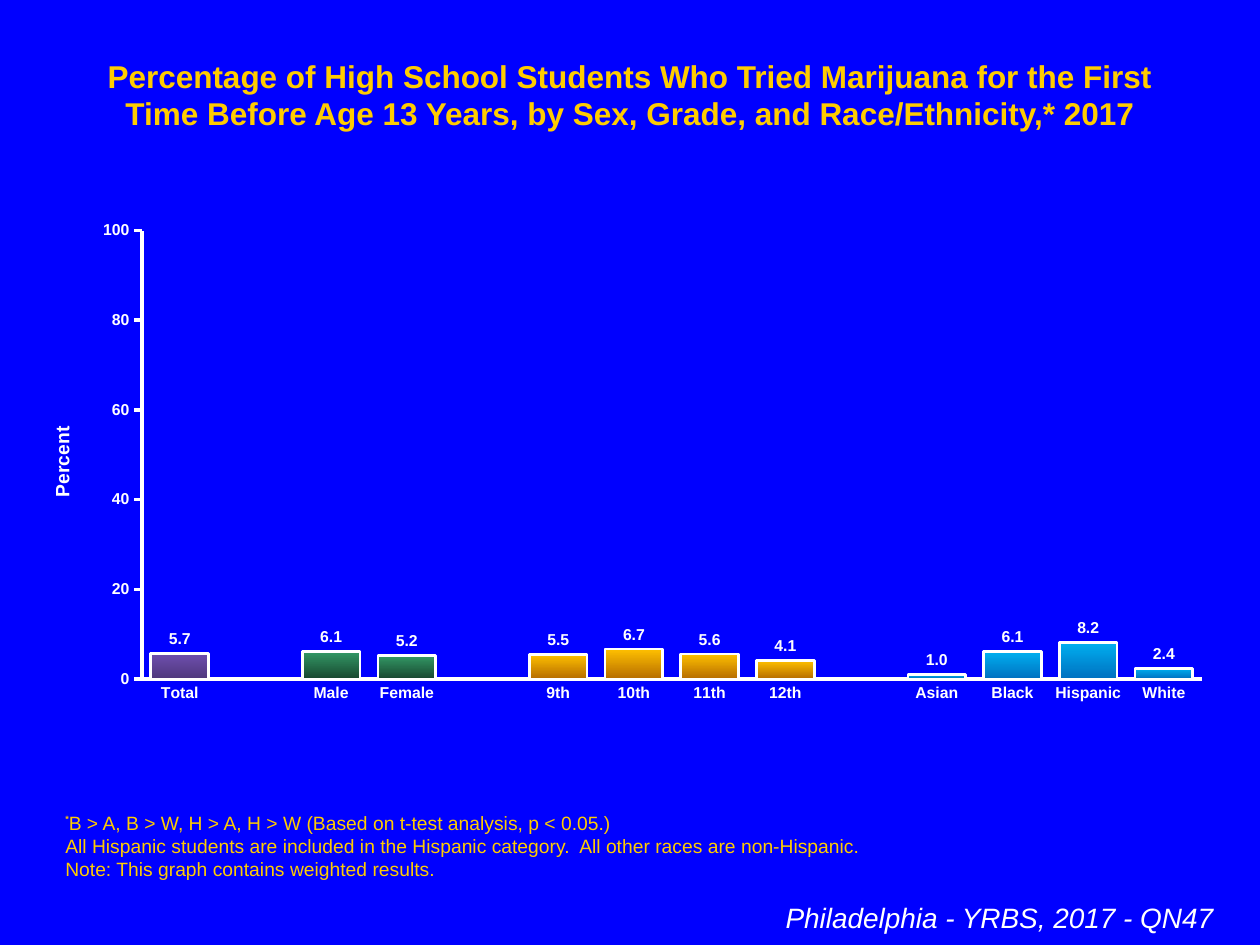
from lxml import etree
from pptx import Presentation
from pptx.chart.data import CategoryChartData
from pptx.dml.color import RGBColor
from pptx.enum.chart import XL_CHART_TYPE as ChartType
from pptx.enum.chart import XL_LABEL_POSITION as LabelPosition
from pptx.enum.chart import XL_TICK_MARK as TickMark
from pptx.enum.text import MSO_ANCHOR as Anchor
from pptx.enum.text import PP_ALIGN as Align
from pptx.oxml import parse_xml
from pptx.oxml.ns import nsdecls
from pptx.util import Inches, Pt

FONT = "Arial"
BLUE, GOLD, WHITE = "0000FF", "FFCC00", "FFFFFF"

TITLE = ("Percentage of High School Students Who Tried Marijuana for the First "
         "Time Before Age 13 Years, by Sex, Grade, and Race/Ethnicity,* 2017")
NOTES = [
    "B > A, B > W, H > A, H > W (Based on t-test analysis, p < 0.05.)",
    "All Hispanic students are included in the Hispanic category.  "
    "All other races are non-Hispanic.",
    "Note: This graph contains weighted results.",
]
SOURCE = "Philadelphia - YRBS, 2017 - QN47"

# Each group: top colour, bottom colour, bars
GROUPS = [
    ("6E4EAE", "4F387C", [("Total", 5.7)]),
    ("339966", "18472F", [("Male", 6.1), ("Female", 5.2)]),
    ("FFC000", "B66D00", [("9th", 5.5), ("10th", 6.7), ("11th", 5.6), ("12th", 4.1)]),
    ("00B0F0", "0070C0", [("Asian", 1.0), ("Black", 6.1), ("Hispanic", 8.2), ("White", 2.4)]),
]


def color(hex_code):
    return RGBColor.from_string(hex_code)


def style_font(font, size, hex_code=WHITE, bold=False, italic=False):
    font.name, font.size, font.bold, font.italic = FONT, Pt(size), bold, italic
    font.color.rgb = color(hex_code)


def style_line(line, width):
    line.color.rgb = color(WHITE)
    line.width = Pt(width)


def add_text(page, box, lines, size, hex_code, align=Align.LEFT, anchor=Anchor.TOP, **style):
    frame = page.shapes.add_textbox(*map(Inches, box)).text_frame
    frame.word_wrap = True
    frame.vertical_anchor = anchor
    frame.text = "\n".join(lines)
    for para in frame.paragraphs:
        para.alignment = align
        style_font(para.font, size, hex_code, **style)
    return frame


def add_notes(page, box):
    frame = add_text(page, box, ["*"] + NOTES[1:], 11, GOLD, anchor=Anchor.BOTTOM)
    first = frame.paragraphs[0]
    star = first.runs[0]
    star.font.size, star.font.bold = Pt(9), True
    star.font._element.set("baseline", "50000")
    first.add_run().text = NOTES[0]


def set_plot_layout(chart, x, y, width, height):
    plot_area = chart._chartSpace.chart.plotArea
    for old in plot_area.findall("c:layout", plot_area.nsmap):
        plot_area.remove(old)
    layout = parse_xml(f"<c:layout {nsdecls('c')}><c:manualLayout/></c:layout>")
    settings = {"layoutTarget": "inner", "xMode": "edge", "yMode": "edge",
                "x": x, "y": y, "w": width, "h": height}
    for name, value in settings.items():
        tag = "{%s}%s" % (layout.nsmap["c"], name)
        etree.SubElement(layout[0], tag).set("val", str(value))
    plot_area.insert(0, layout)


def style_axes(chart):
    for axis in (chart.category_axis, chart.value_axis):
        axis.has_major_gridlines = False
        axis.minor_tick_mark = TickMark.NONE
        style_font(axis.tick_labels.font, 9, bold=True)
        style_line(axis.format.line, 2)
    chart.category_axis.major_tick_mark = TickMark.NONE
    values = chart.value_axis
    values.major_tick_mark = TickMark.OUTSIDE
    values.minimum_scale, values.maximum_scale, values.major_unit = 0, 100, 20
    title = values.axis_title.text_frame
    title.text = "Percent"
    style_font(title.paragraphs[0].font, 11, bold=True)


def add_bar_chart(page, box):
    # An empty category separates neighbouring groups
    bars = []
    for top, bottom, members in GROUPS:
        if bars:
            bars.append(("", None, None))
        bars += [(name, value, (top, bottom)) for name, value in members]

    data = CategoryChartData()
    data.categories = [name for name, _, _ in bars]
    data.add_series("Series 1", [value for _, value, _ in bars])
    chart = page.shapes.add_chart(ChartType.COLUMN_CLUSTERED, *map(Inches, box), data).chart
    chart.has_legend = chart.has_title = False
    style_font(chart.font, 18)
    set_plot_layout(chart, 0.1, 0.04, 0.88, 0.89)
    style_axes(chart)

    plot = chart.plots[0]
    plot.gap_width, plot.overlap, plot.vary_by_categories = 31, 100, False
    plot.has_data_labels = True
    labels = plot.data_labels
    labels.show_value = True
    labels.number_format, labels.number_format_is_linked = "#,##0.0", False
    labels.position = LabelPosition.OUTSIDE_END
    style_font(labels.font, 9, bold=True)

    # Gradient bars with white outlines
    for index, (_, _, shades) in enumerate(bars):
        if shades:
            look = plot.series[0].points[index].format
            look.fill.gradient()
            look.fill.gradient_angle = 270
            for stop, shade in zip(look.fill.gradient_stops, shades):
                stop.color.rgb = color(shade)
            style_line(look.line, 1.5)


def main():
    deck = Presentation()
    deck.slide_width, deck.slide_height = Inches(10), Inches(7.5)
    page = deck.slides.add_slide(deck.slide_layouts[6])
    page.background.fill.solid()
    page.background.fill.fore_color.rgb = color(BLUE)

    add_text(page, (0.5, 0.4, 9, 0.7), [TITLE], 18, GOLD, Align.CENTER, bold=True)
    add_bar_chart(page, (0.17, 1.67, 9.56, 4))
    add_notes(page, (0.42, 6.4, 9.17, 0.64))
    add_text(page, (0.33, 7.1, 9.4, 0.37), [SOURCE], 16, WHITE, Align.RIGHT, italic=True)
    deck.save("out.pptx")


if __name__ == "__main__":
    main()
